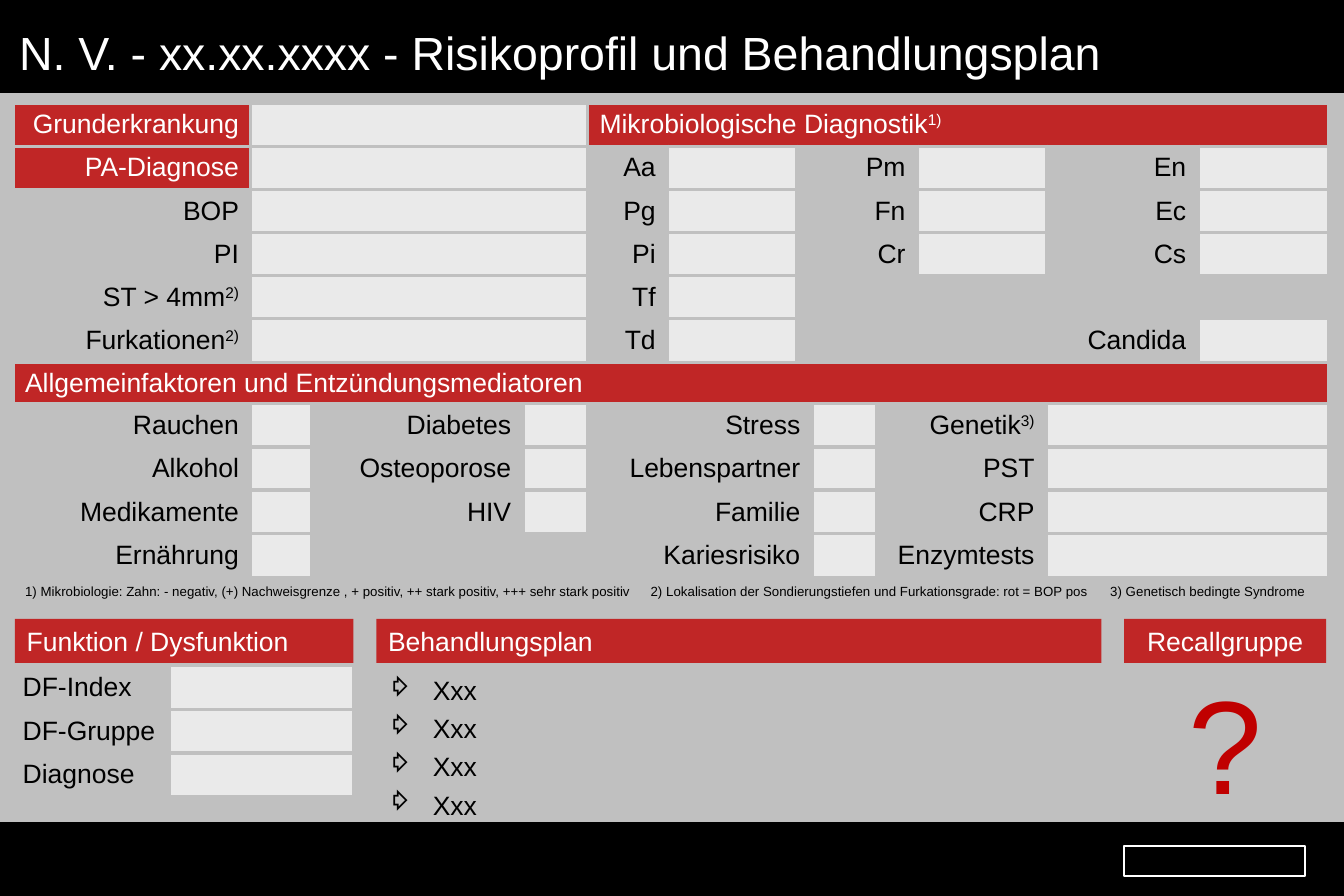
from pptx import Presentation
from pptx.dml.color import RGBColor
from pptx.enum.shapes import MSO_CONNECTOR, MSO_SHAPE
from pptx.enum.text import MSO_ANCHOR, PP_ALIGN
from pptx.oxml.ns import qn
from pptx.util import Pt
from lxml.etree import SubElement

BLACK, WHITE, GREY, FIELD, RED = "000000", "FFFFFF", "C0C0C0", "EAEAEA", "C00000"
LEFT, CENTER, RIGHT = PP_ALIGN.LEFT, PP_ALIGN.CENTER, PP_ALIGN.RIGHT
SLIDE_W, SLIDE_H = 810, 540
LOW_ROW, HIGH_ROW = 25, 26.4

PROFILE_COLS = [143.3, 36.7, 127.4, 38.9, 48.2, 77.8, 9.4, 38.9, 24.5, 77.8, 91.4, 78.5]
PROFILE_ROWS = [LOW_ROW] * 5 + [HIGH_ROW] + [LOW_ROW] * 3 + [HIGH_ROW] * 2 + [17]
HEADERS = {"Grunderkrankung", "PA-Diagnose", "Mikrobiologische Diagnostik^1)",
           "Allgemeinfaktoren und Entzündungsmediatoren"}
# Spans alternate between a label and its field.
DIAGNOSIS_SPANS = [1, 3, 1, 1, 3, 1, 1, 1]
FACTOR_SPANS = [1, 1, 1, 1, 3, 1, 2, 2]
PROFILE = [
    ([1, 3, 8], ["Grunderkrankung", "Mikrobiologische Diagnostik^1)"]),
    (DIAGNOSIS_SPANS, ["PA-Diagnose", "Aa", "Pm", "En"]),
    (DIAGNOSIS_SPANS, ["BOP", "Pg", "Fn", "Ec"]),
    (DIAGNOSIS_SPANS, ["PI", "Pi", "Cr", "Cs"]),
    (DIAGNOSIS_SPANS, ["ST > 4mm^2)", "Tf", "", ""]),
    (DIAGNOSIS_SPANS, ["Furkationen^2)", "Td", "", "Candida"]),
    ([12], ["Allgemeinfaktoren und Entzündungsmediatoren"]),
    (FACTOR_SPANS, ["Rauchen", "Diabetes", "Stress", "Genetik^3)"]),
    (FACTOR_SPANS, ["Alkohol", "Osteoporose", "Lebenspartner", "PST"]),
    (FACTOR_SPANS, ["Medikamente", "HIV", "Familie", "CRP"]),
    (FACTOR_SPANS, ["Ernährung", "", "Kariesrisiko", "Enzymtests"]),
]
FOOTNOTES = [
    "1) Mikrobiologie: Zahn: - negativ, (+) Nachweisgrenze , + positiv, "
    "++ stark positiv, +++ sehr stark positiv",
    "2) Lokalisation der Sondierungstiefen und Furkationsgrade: rot = BOP pos",
    "3) Genetisch bedingte Syndrome",
]
FOOTNOTE_TABS = [377, 654]


def rgb(value):
    return RGBColor.from_string(value)


def format_runs(p, size, color):
    for r in p.runs:
        r.font.name, r.font.size = "Arial", Pt(size)
        r.font.color.rgb = rgb(color)


def paint(fill, parent, color):
    """Fill solid; the red of the headings is 80 % opaque."""
    fill.solid()
    fill.fore_color.rgb = rgb(color)
    if color == RED:
        clr = parent.find(qn("a:solidFill")).find(qn("a:srgbClr"))
        SubElement(clr, qn("a:alpha"), val="80000")


def add_bar(slide, x, y, w, h, fill, text="", align=LEFT):
    sp = slide.shapes.add_shape(MSO_SHAPE.RECTANGLE, Pt(x), Pt(y), Pt(w), Pt(h))
    sp.shadow.inherit = False
    sp.line.fill.background()
    paint(sp.fill, sp._element.spPr, fill)
    tf = sp.text_frame
    tf.vertical_anchor = MSO_ANCHOR.TOP
    p = tf.paragraphs[0]
    p.text, p.alignment = text, align
    format_runs(p, 16, WHITE)
    return sp


def add_text(slide, x, y, w, h, text, size, color, align=LEFT):
    tf = slide.shapes.add_textbox(Pt(x), Pt(y), Pt(w), Pt(h)).text_frame
    tf.word_wrap = True
    tf.text = text
    for p in tf.paragraphs:
        p.alignment = align
        format_runs(p, size, color)
    return tf


def add_rule(slide, y):
    line = slide.shapes.add_connector(MSO_CONNECTOR.STRAIGHT, 0, Pt(y), Pt(SLIDE_W), Pt(y))
    line.line.color.rgb = rgb(BLACK)
    line.line.width = Pt(3)
    SubElement(line._element.spPr, qn("a:effectLst"))


def add_grid(slide, x, y, cols, rows):
    """Add a table without fills whose borders have the background colour."""
    table = slide.shapes.add_table(len(rows), len(cols), Pt(x), Pt(y),
                                   Pt(sum(cols)), Pt(sum(rows))).table
    table.first_row = table.horz_banding = False
    for col, width in zip(table.columns, cols):
        col.width = Pt(width)
    for row, height in zip(table.rows, rows):
        row.height = Pt(height)
    for cell in table.iter_cells():
        tcPr = cell._tc.get_or_add_tcPr()
        for side in ("a:lnL", "a:lnR", "a:lnT", "a:lnB"):
            ln = SubElement(tcPr, qn(side), w=str(Pt(2.25)))
            SubElement(SubElement(ln, qn("a:solidFill")), qn("a:srgbClr"), val=GREY)
        cell.fill.background()
        cell.margin_top = cell.margin_bottom = Pt(2)
        cell.vertical_anchor = MSO_ANCHOR.MIDDLE
    return table


def write_label(cell, text, align, color=BLACK, size=16):
    """Write a label; what follows ^ is superscript."""
    p = cell.text_frame.paragraphs[0]
    p.alignment = align
    for i, part in enumerate(text.split("^")):
        r = p.add_run()
        r.text = part
        if i:
            r.font._element.set("baseline", "30000")
    format_runs(p, size, color)


def fill_cell(cell, color):
    paint(cell.fill, cell._tc.tcPr, color)


def fill_profile_row(table, row, spans, labels):
    col = 0
    for i, span in enumerate(spans):
        cell, label = table.cell(row, col), labels[i // 2]
        if span > 1:
            cell.merge(table.cell(row, col + span - 1))
        if label and i % 2:
            fill_cell(cell, FIELD)
        elif label:
            header = label in HEADERS
            if header:
                fill_cell(cell, RED)
            write_label(cell, label, LEFT if span >= 8 else RIGHT, WHITE if header else BLACK)
        col += span


def add_profile(slide):
    table = add_grid(slide, 7.9, 62.2, PROFILE_COLS, PROFILE_ROWS)
    for row, (spans, labels) in enumerate(PROFILE):
        fill_profile_row(table, row, spans, labels)
    notes = table.cell(len(PROFILE), 0)
    notes.merge(table.cell(len(PROFILE), len(PROFILE_COLS) - 1))
    pPr = notes.text_frame.paragraphs[0]._p.get_or_add_pPr()
    tabs = SubElement(pPr, qn("a:tabLst"))
    for pos in FOOTNOTE_TABS:
        SubElement(tabs, qn("a:tab"), pos=str(Pt(pos)), algn="l")
    write_label(notes, "\t".join(FOOTNOTES), LEFT, size=8)


def add_function_table(slide):
    labels = ["DF-Index", "DF-Gruppe", "Diagnose"]
    table = add_grid(slide, 6.5, 401, [95.8, 110.9], [HIGH_ROW] * len(labels))
    for row, label in enumerate(labels):
        write_label(table.cell(row, 0), label, LEFT)
        fill_cell(table.cell(row, 1), FIELD)


def add_plan(slide):
    tf = add_text(slide, 226.8, 398.9, 437, 100, "\n".join(["Xxx"] * 4), 16, BLACK)
    for p in tf.paragraphs:
        p.line_spacing = 1.2
        pPr = p._p.get_or_add_pPr()
        pPr.set("marL", str(Pt(27)))
        pPr.set("indent", str(Pt(-27)))
        SubElement(pPr, qn("a:buSzPct"), val="80000")
        SubElement(pPr, qn("a:buChar"), char="⇨")


def main():
    prs = Presentation()
    prs.slide_width, prs.slide_height = Pt(SLIDE_W), Pt(SLIDE_H)
    slide = prs.slides.add_slide(prs.slide_layouts[6])
    slide.background.fill.solid()
    slide.background.fill.fore_color.rgb = rgb(GREY)

    add_bar(slide, 0, 0, SLIDE_W, 54, BLACK)
    add_rule(slide, 54.7)
    add_profile(slide)
    title = add_text(slide, 0, 8.6, 765, 46,
                     "N. V. - xx.xx.xxxx - Risikoprofil und Behandlungsplan", 28, WHITE)
    title.margin_left = title.margin_right = Pt(11.5)
    title.margin_top = title.margin_bottom = Pt(5.8)

    add_bar(slide, 9, 373, 204, 26.6, RED, "Funktion / Dysfunktion")
    add_function_table(slide)
    question = add_text(slide, 677.5, 394.6, 121.7, 104.4, "?", 80, RED, CENTER)
    question.vertical_anchor = MSO_ANCHOR.MIDDLE
    add_bar(slide, 677.5, 373, 121.7, 26.6, RED, "Recallgruppe", CENTER)
    add_plan(slide)
    add_bar(slide, 226.8, 373, 437, 26.6, RED, "Behandlungsplan")

    add_bar(slide, 0, 496, SLIDE_W, SLIDE_H - 496, BLACK)
    add_rule(slide, 496.8)
    emblem = add_bar(slide, 677.5, 510, 109, 18, BLACK)
    emblem.line.color.rgb = rgb(WHITE)
    emblem.line.width = Pt(1)
    prs.save("out.pptx")


if __name__ == "__main__":
    main()
